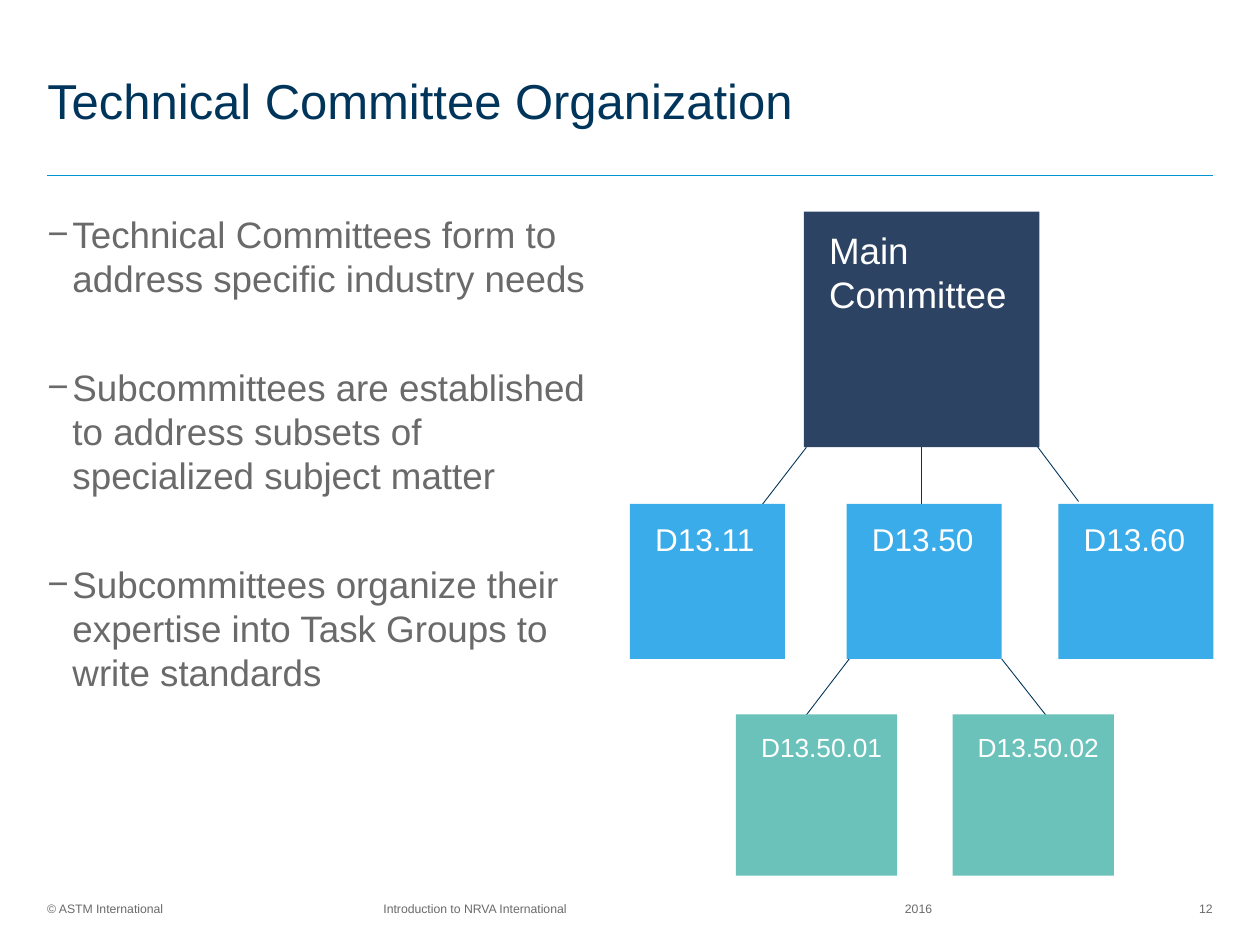
from lxml.etree import SubElement
from pptx import Presentation
from pptx.dml.color import RGBColor
from pptx.enum.shapes import MSO_CONNECTOR, MSO_SHAPE
from pptx.enum.text import MSO_ANCHOR, MSO_AUTO_SIZE, PP_ALIGN
from pptx.oxml.ns import qn
from pptx.util import Inches, Pt

COLUMNS, ROWS = 100, 75
SLIDE_WIDTH, SLIDE_HEIGHT = Inches(10), Inches(7.5)
FONT = "Arial"
COLORS = {
    "navy": "00355B",
    "rule": "0095D6",
    "grey": "6A6A6A",
    "white": "FFFFFF",
    "main": "2D4363",
    "subcommittee": "3AACE9",
    "task_group": "6BC2BB",
}
LEFT, RIGHT = 3.75, 96.3
FOOTER_ROW = 71.5
BOX_INSETS = (0.2, 0.13, 0.08, 0.08)
TOPICS = [
    "Technical Committees form to address specific industry needs",
    "Subcommittees are established to address subsets of specialized subject matter",
    "Subcommittees organize their expertise into Task Groups to write standards",
]
FOOTERS = [
    ("© ASTM International", LEFT, 11.3, PP_ALIGN.LEFT),
    ("Introduction to NRVA International", 20.5, 34.4, PP_ALIGN.CENTER),
    ("2016", 57.4, 31, PP_ALIGN.CENTER),
    ("12", 91.3, 4.95, PP_ALIGN.RIGHT),
]
TREE_LEVELS = [
    ("main", 16.8, 18.7, 21, [("Main Committee", 63.8)]),
    ("subcommittee", 40, 12.3, 18, [("D13.11", 50), ("D13.50", 67.2), ("D13.60", 84)]),
    ("task_group", 56.7, 12.8, 15, [("D13.50.01", 58.4), ("D13.50.02", 75.6)]),
]
BRANCHES = [
    ((60.3, 40.3), (64, 35.5)),
    ((85.6, 39.8), (82, 35)),
    ((73.1, 47.3), (73.1, 32.1)),
    ((63.8, 57), (67.4, 52.3)),
    ((83.2, 57), (79.5, 52.3)),
]


def color(name):
    return RGBColor.from_string(COLORS[name])


def across(columns):
    return round(SLIDE_WIDTH * columns / COLUMNS)


def down(rows):
    return round(SLIDE_HEIGHT * rows / ROWS)


def area(left, top, width, height):
    return across(left), down(top), across(width), down(height)


def place(shape, *cells):
    shape.left, shape.top, shape.width, shape.height = area(*cells)


def add_dash(paragraph):
    properties = paragraph._p.get_or_add_pPr()
    properties.set("marL", str(Inches(0.2)))
    properties.set("indent", str(-Inches(0.2)))
    SubElement(properties, qn("a:buFont"), typeface=FONT)
    SubElement(properties, qn("a:buChar"), char="−")


def write(shape, *texts, size, ink, align=PP_ALIGN.LEFT, anchor=MSO_ANCHOR.TOP,
          insets=(0, 0, 0, 0), space_after=0, line_spacing=None, dashed=False):
    frame = shape.text_frame
    frame.word_wrap = True
    frame.auto_size = MSO_AUTO_SIZE.NONE
    frame.vertical_anchor = anchor
    (frame.margin_left, frame.margin_top,
     frame.margin_right, frame.margin_bottom) = map(Inches, insets)
    for index, text in enumerate(texts):
        paragraph = frame.add_paragraph() if index else frame.paragraphs[0]
        if dashed:
            add_dash(paragraph)
        paragraph.alignment = align
        paragraph.space_before = Pt(0)
        paragraph.space_after = Pt(space_after)
        if line_spacing:
            paragraph.line_spacing = Pt(line_spacing)
        run = paragraph.add_run()
        run.text = text
        run.font.name = FONT
        run.font.size = Pt(size)
        run.font.color.rgb = color(ink)


def add_line(slide, start, end, ink):
    line = slide.shapes.add_connector(
        MSO_CONNECTOR.STRAIGHT,
        across(start[0]), down(start[1]), across(end[0]), down(end[1]))
    line.line.color.rgb = color(ink)
    line.line.width = Pt(0.5)
    SubElement(line._element.spPr, qn("a:effectLst"))


def add_box(slide, text, left, top, side, fill, size):
    box = slide.shapes.add_shape(MSO_SHAPE.RECTANGLE, *area(left, top, side, side))
    box.shadow.inherit = False
    box.fill.solid()
    box.fill.fore_color.rgb = color(fill)
    box.line.fill.background()
    write(box, text, size=size, ink="white", insets=BOX_INSETS)


def add_footer(slide, text, left, width, align):
    footer = slide.shapes.add_textbox(*area(left, FOOTER_ROW, width, 1.3))
    write(footer, text, size=7, ink="grey", align=align, anchor=MSO_ANCHOR.MIDDLE)


def add_tree(slide):
    for start, end in BRANCHES:
        add_line(slide, start, end, "navy")
    for fill, top, side, size, boxes in TREE_LEVELS:
        for text, left in boxes:
            add_box(slide, text, left, top, side, fill, size)


def main():
    presentation = Presentation()
    presentation.slide_width, presentation.slide_height = SLIDE_WIDTH, SLIDE_HEIGHT
    slide = presentation.slides.add_slide(presentation.slide_layouts[1])
    title, body = slide.placeholders

    place(title, LEFT, 3.5, 77.1, 9.4)
    write(title, "Technical Committee Organization", size=28, ink="navy",
          anchor=MSO_ANCHOR.MIDDLE, line_spacing=30)
    add_line(slide, (LEFT, 13.9), (RIGHT, 13.9), "rule")

    place(body, LEFT, 16.8, 43.8, 51.2)
    write(body, *TOPICS, size=21, ink="grey", space_after=37, dashed=True)

    add_tree(slide)
    for footer in FOOTERS:
        add_footer(slide, *footer)
    presentation.save("out.pptx")


if __name__ == "__main__":
    main()
